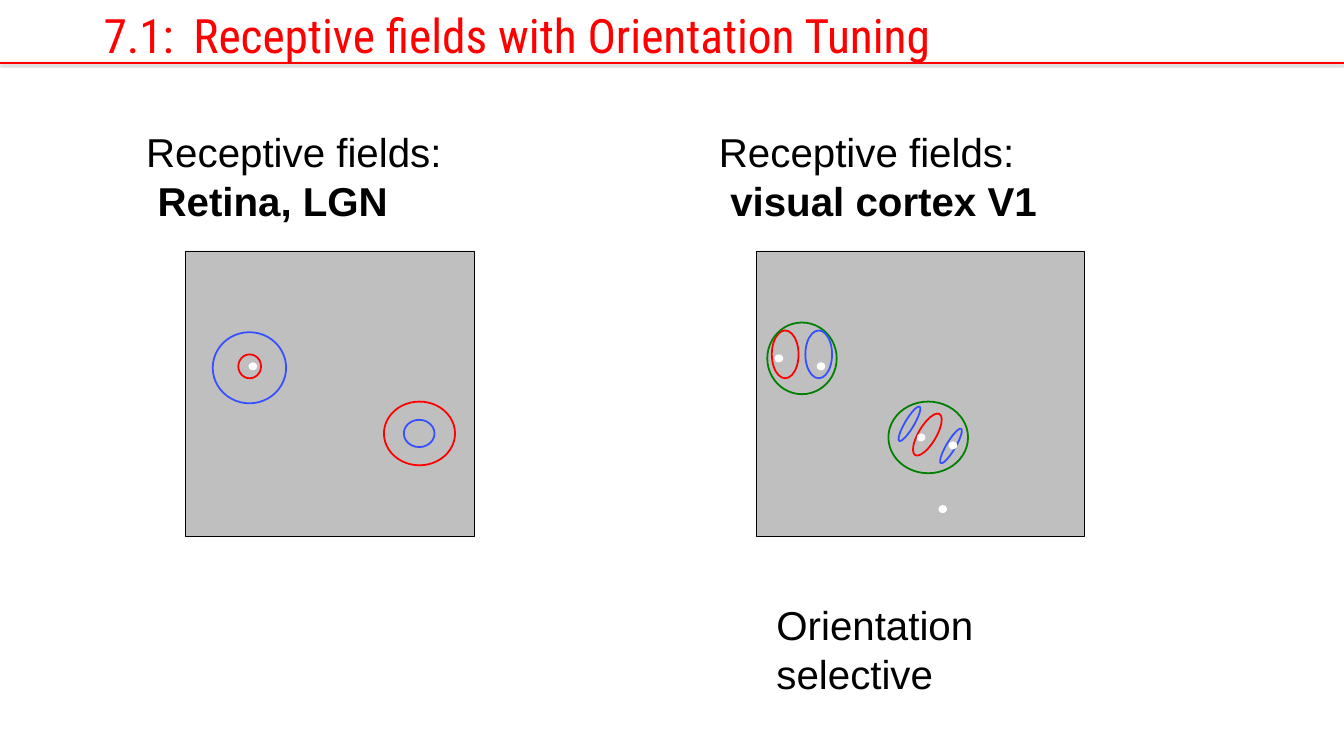
import pptx
import pptx.dml.color
import pptx.enum.shapes
import pptx.enum.text
import pptx.oxml
import pptx.oxml.ns
import pptx.util
from dataclasses import dataclass

Inches = pptx.util.Inches
Pt = pptx.util.Pt
Color = pptx.dml.color.RGBColor.from_string
Kind = pptx.enum.shapes.MSO_SHAPE


@dataclass(frozen=True)
class Theme:
    red: str = "FF0000"
    blue: str = "3550FE"
    green: str = "008000"
    gray: str = "BFBFBF"
    white: str = "FFFFFF"
    black: str = "000000"
    title_font: str = "Roboto Condensed"
    text_font: str = "Arial"
    title_size: int = 60
    text_size: int = 51
    ring_line: float = 2.25
    panel_line: float = 0.75


theme = Theme()


def add_figure(parent, kind, bounds, fill=None, line=None, weight=theme.ring_line):
    figure = parent.shapes.add_shape(kind, *[Inches(value) for value in bounds])
    figure.shadow.inherit = False
    if fill:
        figure.fill.solid()
        figure.fill.fore_color.rgb = Color(fill)
    else:
        figure.fill.background()
    if line:
        figure.line.color.rgb = Color(line)
        figure.line.width = Pt(weight)
    else:
        figure.line.fill.background()
    return figure


def style_paragraph(para, font, size, color, bold=False, margin=0, indent=0):
    para.alignment = pptx.enum.text.PP_ALIGN.LEFT
    properties = para._p.get_or_add_pPr()
    properties.set("marL", str(Inches(margin)))
    properties.set("indent", str(Inches(indent)))
    for span in para.runs:
        span.font.name = font
        span.font.size = Pt(size)
        span.font.color.rgb = Color(color)
        span.font.bold = bold


deck = pptx.Presentation()
deck.slide_width = Inches(23.63)
deck.slide_height = Inches(13.29)
page = deck.slides.add_slide(deck.slide_layouts[5])

# Title, with a hanging indent after the section number
title = page.shapes.title
title.left, title.top, title.width, title.height = [
    Inches(value) for value in (0, 0, 22.81, 1.16)]
title.text_frame.text = "7.1:\tReceptive fields with Orientation Tuning"
title.text_frame.vertical_anchor = pptx.enum.text.MSO_ANCHOR.BOTTOM
title.text_frame.auto_size = pptx.enum.text.MSO_AUTO_SIZE.NONE
style_paragraph(title.text_frame.paragraphs[0], theme.title_font, theme.title_size,
                theme.red, margin=3.3, indent=-1.58)

# Rule below the title, with a soft shadow
rule = page.shapes.add_connector(pptx.enum.shapes.MSO_CONNECTOR.STRAIGHT,
                                 0, Inches(1.11), deck.slide_width, Inches(1.11))
rule.line.color.rgb = Color(theme.red)
rule.line.width = Pt(2)
rule._element.spPr.append(pptx.oxml.parse_xml(
    f'<a:effectLst {pptx.oxml.ns.nsdecls("a")}>'
    f'<a:outerShdw blurRad="{Pt(3.1)}" dist="{Pt(1.6)}" dir="5400000" rotWithShape="0">'
    f'<a:srgbClr val="{theme.black}"><a:alpha val="38000"/></a:srgbClr>'
    '</a:outerShdw></a:effectLst>'))

# Gray visual fields
for left, width in ((3.26, 5.08), (13.3, 5.77)):
    add_figure(page, Kind.RECTANGLE, (left, 4.41, width, 5.02),
               theme.gray, theme.black, theme.panel_line)

# Receptive field outlines: color, left, top, width, height, rotation
on_center = [(theme.red, 4.19, 6.23, 0.4, 0.42, 0),
             (theme.blue, 3.74, 5.84, 1.29, 1.25, 0)]
off_center = [(theme.blue, 7.1, 7.38, 0.54, 0.48, 0),
              (theme.red, 6.75, 7.06, 1.25, 1.12, 0)]
vertical_field = [(theme.red, 13.57, 5.81, 0.47, 0.84, 0),
                  (theme.green, 13.49, 5.67, 1.22, 1.26, 0),
                  (theme.blue, 14.16, 5.81, 0.47, 0.84, 0)]
tilted_field = [(theme.green, 15.62, 7.06, 1.4, 1.26, 0),
                (theme.red, 16.15, 7.22, 0.31, 0.84, 30.7),
                (theme.blue, 16.64, 7.49, 0.16, 0.7, 30.7),
                (theme.blue, 15.91, 7.1, 0.16, 0.7, 30.7)]
off_center_group = page.shapes.add_group_shape()
for parent, field in ((page, on_center), (off_center_group, off_center),
                      (page, vertical_field), (page, tilted_field)):
    for color, left, top, width, height, rotation in field:
        ring = add_figure(parent, Kind.OVAL, (left, top, width, height), line=color)
        ring.rotation = rotation

# White light spots
for left, top in ((4.37, 6.37), (16.5, 8.88), (13.62, 6.23),
                  (14.36, 6.37), (16.68, 7.76), (16.12, 7.62)):
    add_figure(page, Kind.OVAL, (left, top, 0.15, 0.14), theme.white)

# Captions: left, top, width, plain line, bold line
captions = [(2.36, 2.13, 6.61, "Receptive fields:", "Retina, LGN"),
            (12.43, 2.13, 8.09, "Receptive fields:", "visual cortex V1"),
            (13.44, 10.45, 5.79, "Orientation selective", None)]
for left, top, width, plain, strong in captions:
    box = page.shapes.add_textbox(Inches(left), Inches(top), Inches(width), Inches(1.93))
    frame = box.text_frame
    frame.word_wrap = True
    frame.auto_size = pptx.enum.text.MSO_AUTO_SIZE.SHAPE_TO_FIT_TEXT
    frame.margin_left = frame.margin_right = Inches(0.21)
    frame.margin_top = frame.margin_bottom = Inches(0.11)
    frame.text = plain
    style_paragraph(frame.paragraphs[0], theme.text_font, theme.text_size, theme.black)
    if strong:
        para = frame.add_paragraph()
        para.text = strong
        style_paragraph(para, theme.text_font, theme.text_size, theme.black,
                        bold=True, margin=0.2)

deck.save("out.pptx")
